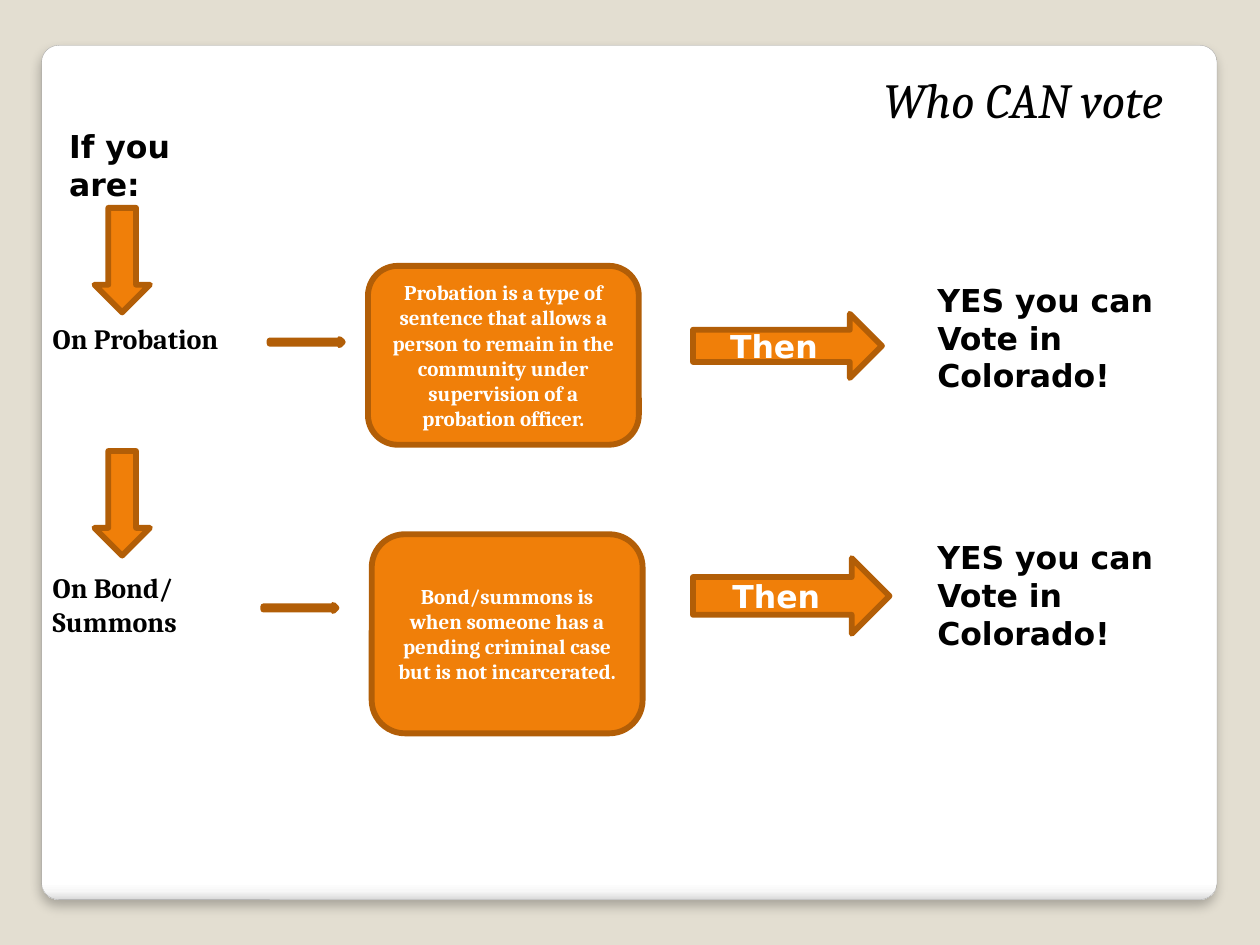
import pptx
import pptx.util
import pptx.dml.color
import pptx.enum.shapes
import pptx.enum.text
import pptx.oxml
import pptx.oxml.ns

Inches, Pt = pptx.util.Inches, pptx.util.Pt
RGBColor = pptx.dml.color.RGBColor
SHAPE = pptx.enum.shapes.MSO_SHAPE
ALIGN = pptx.enum.text.PP_ALIGN
ANCHOR = pptx.enum.text.MSO_ANCHOR

BEIGE = RGBColor(0xE3, 0xDE, 0xD1)
GREY = RGBColor(0xA4, 0xA4, 0xA4)
ORANGE = RGBColor(0xF0, 0x7F, 0x09)
BROWN = RGBColor(0xB2, 0x5E, 0x07)
BLACK = RGBColor(0, 0, 0)
WHITE = RGBColor(0xFF, 0xFF, 0xFF)
SERIF, SANS = "Cambria", "DejaVu Sans"

PANEL_STOPS = [(0, "FFFFFF"), (98, "FFFFFF"), (99, "F7F7F7"), (100, "DADADA")]
NS = pptx.oxml.ns.nsdecls("a")


def write(tf, text, font, size, color, align=ALIGN.LEFT, bold=True):
    tf.word_wrap = True
    tf.text = text
    for p in tf.paragraphs:
        p.alignment = align
        p.font.name, p.font.size = font, Pt(size)
        p.font.bold, p.font.color.rgb = bold, color


def add_text(s, left, top, width, height, text, font, size):
    sp = s.shapes.add_textbox(*map(Inches, (left, top, width, height)))
    write(sp.text_frame, text, font, size, BLACK)


def add_block(s, kind, left, top, width, height, text="", font=SERIF, size=12):
    sp = s.shapes.add_shape(kind, *map(Inches, (left, top, width, height)))
    sp.shadow.inherit = False
    sp.fill.solid()
    sp.fill.fore_color.rgb = ORANGE
    sp.line.color.rgb = BROWN
    sp.line.width = Pt(3.35)
    if text:
        write(sp.text_frame, text, font, size, WHITE, ALIGN.CENTER)


def add_panel(s, left, top, width, height):
    sp = s.shapes.add_shape(SHAPE.ROUNDED_RECTANGLE,
                            *map(Inches, (left, top, width, height)))
    sp.adjustments[0] = 0.02
    sp.line.color.rgb = GREY
    sp.line.width = Pt(0.16)
    # Four-stop vertical gradient
    sp.fill.gradient()
    sp.fill.gradient_angle = 270
    stops = sp.element.spPr.find(".//" + pptx.oxml.ns.qn("a:gsLst"))
    for stop in list(stops):
        stops.remove(stop)
    for pos, color in PANEL_STOPS:
        stops.append(pptx.oxml.parse_xml(
            f'<a:gs {NS} pos="{pos * 1000}"><a:srgbClr val="{color}"/></a:gs>'))
    # Soft shadow below
    sp.shadow.inherit = False
    effects = sp.element.spPr.find(pptx.oxml.ns.qn("a:effectLst"))
    effects.append(pptx.oxml.parse_xml(
        f'<a:outerShdw {NS} blurRad="{Pt(6)}" dist="{Pt(4)}" dir="5400000" '
        'algn="t" rotWithShape="0"><a:srgbClr val="000000">'
        '<a:alpha val="25000"/></a:srgbClr></a:outerShdw>'))


def add_title(s, left, top, width, height):
    sp = s.shapes.title
    sp.left, sp.top, sp.width, sp.height = map(Inches, (left, top, width, height))
    sp.text_frame.vertical_anchor = ANCHOR.TOP
    write(sp.text_frame, "Who CAN vote", SERIF, 28, BLACK, ALIGN.RIGHT, False)
    sp.text_frame.paragraphs[0].font.italic = True


def add_intro(s, left, top):
    add_text(s, left, top, 1.49, 0.4, "If you are:", SANS, 18)


def add_case(s, left, top, status, status_dy, meaning, height, card_dx,
             pointer_dx, pointer_dy, then_dy, then_size, verdict_dy):
    # Down arrow and status
    add_block(s, SHAPE.DOWN_ARROW, left + 0.43, top + status_dy - 0.85, 0.44, 0.83) \
        if status_dy > 0.3 else \
        add_block(s, SHAPE.DOWN_ARROW, left + 0.43, top - 0.66, 0.44, 0.83)
    add_text(s, left, top + status_dy, 1.82, 0.37, status, SERIF, 16)
    # Pointer and explanation
    add_block(s, SHAPE.RIGHT_ARROW, left + pointer_dx, top + pointer_dy, 0.58, 0.05)
    add_block(s, SHAPE.ROUNDED_RECTANGLE, left + card_dx, top, 2.15, height, meaning)
    # Consequence
    add_block(s, SHAPE.RIGHT_ARROW, left + 5.18, top + then_dy, *then_size,
              "Then ", SANS, 18)
    add_text(s, left + 7.02, top + verdict_dy, 2.08, 1.01,
             "YES you can Vote in Colorado!", SANS, 18)


def main():
    prs = pptx.Presentation()
    prs.slide_width, prs.slide_height = Inches(10), Inches(7.5)
    s = prs.slides.add_slide(prs.slide_layouts[5])
    s.background.fill.solid()
    s.background.fill.fore_color.rgb = BEIGE

    add_panel(s, 0.33, 0.36, 9.33, 6.78)
    # Bring the title in front of the panel
    s.shapes.element.append(s.shapes.title.element)
    add_title(s, 0.33, 0.5, 9, 0.57)
    add_intro(s, 0.45, 0.96)
    add_case(s, 0.32, 2.11, "On Probation", 0.39,
             "Probation is a type of sentence that allows a person to remain in "
             "the community under supervision of a probation officer.",
             1.42, 2.6, 1.82, 0.58, 0.38, (1.5, 0.51), 0.07)
    add_case(s, 0.32, 4.24, "On Bond/\nSummons", 0.24,
             "Bond/summons is when someone has a pending criminal case but is "
             "not incarcerated.",
             1.58, 2.63, 1.77, 0.56, 0.19, (1.56, 0.6), -0.02)


    prs.save("out.pptx")


if __name__ == "__main__":
    main()
